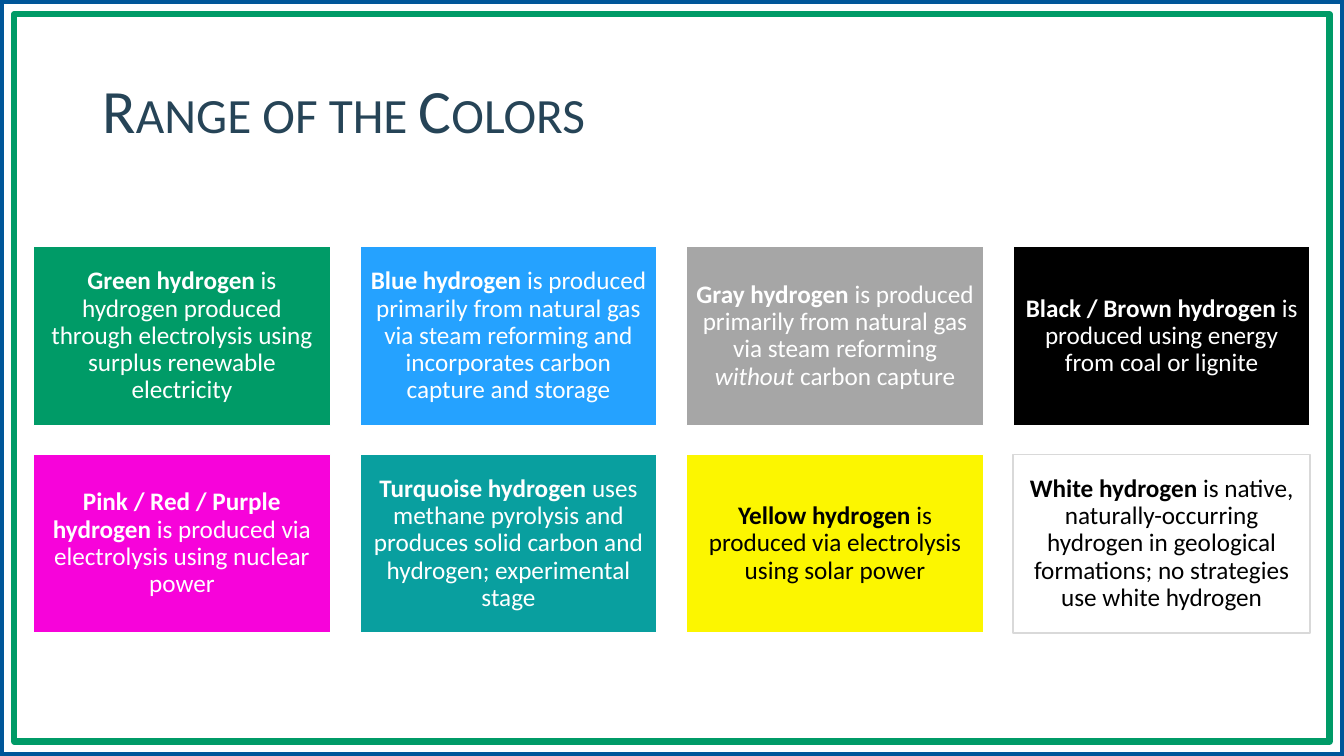
import pptx
import pptx.util
import pptx.dml.color
import pptx.enum.shapes
import pptx.enum.text

Cm = pptx.util.Cm
Pt = pptx.util.Pt
FONT = "Calibri"
HUES = {
    "navy": "005699", "slate": "264457", "green": "009B67", "blue": "25A2FF",
    "gray": "A6A6A6", "black": "000000", "pink": "F703DA", "teal": "099F9F",
    "yellow": "FCF600", "white": "FFFFFF", "pale": "D9D9D9",
}
TITLE = "Range of the Colors"
CARDS = [
    ("green", "white", "white", [
        ("Green hydrogen ", "b"),
        ("is hydrogen produced through electrolysis using surplus renewable electricity", "")]),
    ("blue", "white", "white", [
        ("Blue hydrogen ", "b"),
        ("is produced primarily from natural gas via steam reforming and "
         "incorporates carbon capture and storage", "")]),
    ("gray", "white", "white", [
        ("Gray hydrogen ", "b"),
        ("is produced primarily from natural gas via steam reforming ", ""),
        ("without", "i"),
        (" carbon capture", "")]),
    ("black", "white", "white", [
        ("Black / Brown hydrogen ", "b"),
        ("is produced using energy from coal or lignite", "")]),
    ("pink", "white", "white", [
        ("Pink / Red / Purple hydrogen", "b"),
        (" is produced via electrolysis using nuclear power", "")]),
    ("teal", "white", "white", [
        ("Turquoise hydrogen ", "b"),
        ("uses methane pyrolysis and produces solid carbon and hydrogen; "
         "experimental stage", "")]),
    ("yellow", "white", "black", [
        ("Yellow hydrogen ", "b"),
        ("is produced via electrolysis using solar power", "")]),
    ("white", "pale", "black", [
        ("White hydrogen ", "b"),
        ("is native, naturally-occurring hydrogen in geological formations; "
         "no strategies use white hydrogen", "")]),
]
WIDE, HIGH = 33.87, 19.05
FRAMES = [(0, "navy", 6), (0.36, "green", 4.5)]
COLS = 4
LEFT, TOP = 0.84, 6.22
CARD_W, CARD_H = 7.49, 4.5
STEP_X, STEP_Y = 8.23, 5.23
INSET = 0.18


def hue(name):
    return pptx.dml.color.RGBColor.from_string(HUES[name])


def add_box(slide, x, y, w, h, fill, line, width):
    box = slide.shapes.add_shape(
        pptx.enum.shapes.MSO_SHAPE.RECTANGLE, Cm(x), Cm(y), Cm(w), Cm(h))
    box.shadow.inherit = False
    if fill:
        box.fill.solid()
        box.fill.fore_color.rgb = hue(fill)
    else:
        box.fill.background()
    box.line.color.rgb = hue(line)
    box.line.width = Pt(width)
    return box


def add_run(para, text, size, color, style=""):
    run = para.add_run()
    run.text = text
    run.font.name = FONT
    run.font.size = Pt(size)
    run.font.color.rgb = hue(color)
    run.font.bold = style == "b"
    run.font.italic = style == "i"
    return run


def set_text(frame, align):
    frame.word_wrap = True
    frame.auto_size = pptx.enum.text.MSO_AUTO_SIZE.NONE
    frame.vertical_anchor = pptx.enum.text.MSO_ANCHOR.MIDDLE
    para = frame.paragraphs[0]
    para.alignment = align
    para.line_spacing = 0.9
    return para


def add_title(slide):
    title = slide.shapes.title
    title.left, title.top = Cm(2.33), Cm(1.01)
    title.width, title.height = Cm(29.21), Cm(3.68)
    para = set_text(title.text_frame, pptx.enum.text.PP_ALIGN.LEFT)
    run = add_run(para, TITLE, 44, "slate")
    run.font._element.set("cap", "small")


def add_card(slide, index, card):
    fill, line, ink, runs = card
    row, col = divmod(index, COLS)
    box = add_box(slide, LEFT + col * STEP_X, TOP + row * STEP_Y,
                  CARD_W, CARD_H, fill, line, 1)
    frame = box.text_frame
    frame.margin_left = frame.margin_right = Cm(INSET)
    frame.margin_top = frame.margin_bottom = Cm(INSET)
    para = set_text(frame, pptx.enum.text.PP_ALIGN.CENTER)
    for text, style in runs:
        add_run(para, text, 18, ink, style)


def main():
    deck = pptx.Presentation()
    deck.slide_width, deck.slide_height = Cm(WIDE), Cm(HIGH)
    slide = deck.slides.add_slide(deck.slide_layouts[5])
    for gap, color, width in FRAMES:
        add_box(slide, gap, gap, WIDE - 2 * gap, HIGH - 2 * gap, None, color, width)
    add_title(slide)
    for index, card in enumerate(CARDS):
        add_card(slide, index, card)
    deck.save("out.pptx")


if __name__ == "__main__":
    main()
